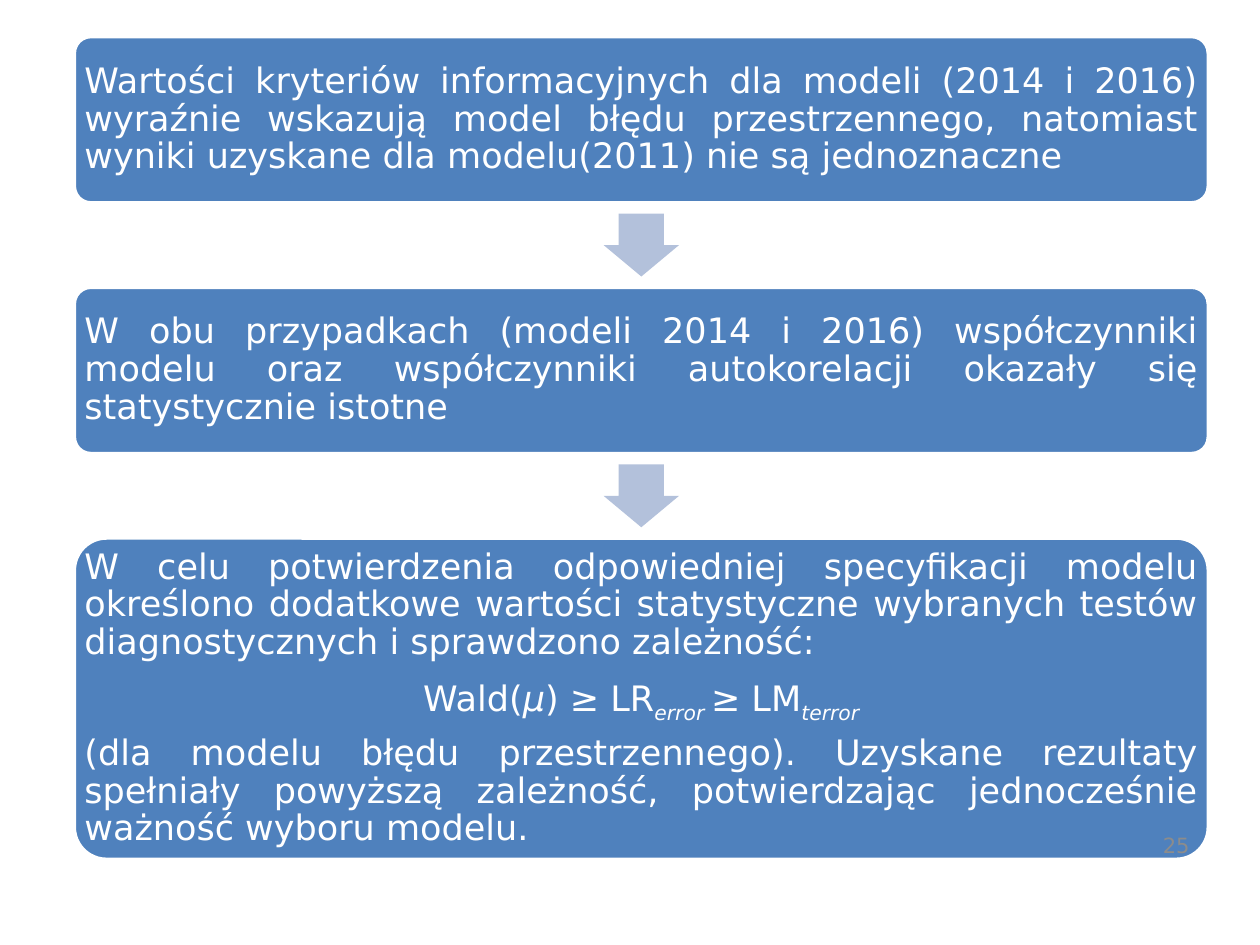
from pptx import Presentation
from pptx.dml.color import RGBColor
from pptx.enum import shapes, text
from pptx.util import Inches, Pt

BLUE = RGBColor(0x4F, 0x81, 0xBD)
PALE_BLUE = RGBColor(0xB3, 0xC1, 0xDB)
WHITE = RGBColor(0xFF, 0xFF, 0xFF)
GREY = RGBColor(0x8C, 0x8C, 0x8C)
FONT = "DejaVu Sans"
CORNER = 0.1

# Each step is a height and its paragraphs; a paragraph is a string
# or a formula given as (text, style) runs.
FORMULA = [("Wald(", ""), ("μ", "italic"), (") ≥ LR", ""), ("error ", "sub"),
           ("≥ LM", ""), ("terror", "sub")]
STEPS = [
    (Inches(1.32), [
        "Wartości kryteriów informacyjnych dla modeli (2014 i 2016) wyraźnie "
        "wskazują model błędu przestrzennego, natomiast wyniki uzyskane dla "
        "modelu(2011) nie są jednoznaczne"]),
    (Inches(1.32), [
        "W obu przypadkach (modeli 2014 i 2016) współczynniki modelu oraz "
        "współczynniki autokorelacji okazały się statystycznie istotne"]),
    (Inches(2.55), [
        "W celu potwierdzenia odpowiedniej specyfikacji modelu określono "
        "dodatkowe wartości statystyczne wybranych testów diagnostycznych "
        "i sprawdzono zależność:",
        FORMULA,
        "(dla modelu błędu przestrzennego). Uzyskane rezultaty spełniały "
        "powyższą zależność, potwierdzając jednocześnie ważność wyboru modelu."]),
]


def style_font(paragraph, size, color):
    paragraph.font.name = FONT
    paragraph.font.size = Pt(size)
    paragraph.font.color.rgb = color


def fill_paragraph(paragraph, content):
    is_formula = not isinstance(content, str)
    paragraph.alignment = text.PP_ALIGN.CENTER if is_formula else text.PP_ALIGN.JUSTIFY
    paragraph.line_spacing = 0.9
    paragraph.space_after = Pt(8.5)
    style_font(paragraph, 20, WHITE)
    for wording, style in content if is_formula else [(content, "")]:
        run = paragraph.add_run()
        run.text = wording
        if style:
            run.font.italic = True
        if style == "sub":
            run.font._element.set("baseline", "-25000")


def add_step(slide, left, top, width, height, paragraphs):
    step = slide.shapes.add_shape(
        shapes.MSO_SHAPE.ROUNDED_RECTANGLE, left, top, width, height)
    step.shadow.inherit = False
    step.adjustments[0] = CORNER
    step.fill.solid()
    step.fill.fore_color.rgb = BLUE
    step.line.color.rgb = WHITE
    step.line.width = Pt(2)

    frame = step.text_frame
    frame.word_wrap = True
    frame.vertical_anchor = text.MSO_ANCHOR.MIDDLE
    # Rounded corners already push the text in by 0.29 of their radius.
    inset = int(Inches(0.08) - 0.29 * CORNER * height)
    frame.margin_left = frame.margin_right = inset
    frame.margin_top = frame.margin_bottom = inset
    for index, content in enumerate(paragraphs):
        paragraph = frame.add_paragraph() if index else frame.paragraphs[0]
        fill_paragraph(paragraph, content)


def add_arrow(slide, left, top, width, gap):
    """Centre a down arrow in the gap between two steps."""
    arrow_width, arrow_height = Inches(0.6), Inches(0.5)
    arrow = slide.shapes.add_shape(
        shapes.MSO_SHAPE.DOWN_ARROW, left + (width - arrow_width) // 2,
        top + (gap - arrow_height) // 2, arrow_width, arrow_height)
    arrow.shadow.inherit = False
    arrow.adjustments[0] = 0.6
    arrow.adjustments[1] = 0.5
    arrow.fill.solid()
    arrow.fill.fore_color.rgb = PALE_BLUE
    arrow.line.fill.background()


def add_flow(slide, left, top, width, gap):
    for index, (height, paragraphs) in enumerate(STEPS):
        if index:
            add_arrow(slide, left, top, width, gap)
            top += gap
        add_step(slide, left, top, width, height, paragraphs)
        top += height


def add_page_number(slide, left, top, width, height, number):
    frame = slide.shapes.add_textbox(left, top, width, height).text_frame
    frame.word_wrap = True
    frame.vertical_anchor = text.MSO_ANCHOR.MIDDLE
    paragraph = frame.paragraphs[0]
    paragraph.text = number
    paragraph.alignment = text.PP_ALIGN.RIGHT
    style_font(paragraph, 12, GREY)


def main():
    prs = Presentation()
    prs.slide_width, prs.slide_height = Inches(10), Inches(7.5)
    slide = prs.slides.add_slide(prs.slide_layouts[6])
    add_flow(slide, Inches(0.59), Inches(0.29), Inches(9), Inches(0.67))
    add_page_number(slide, Inches(8.86), Inches(6.51), Inches(0.68), Inches(0.4), "25")
    prs.save("out.pptx")


if __name__ == "__main__":
    main()
